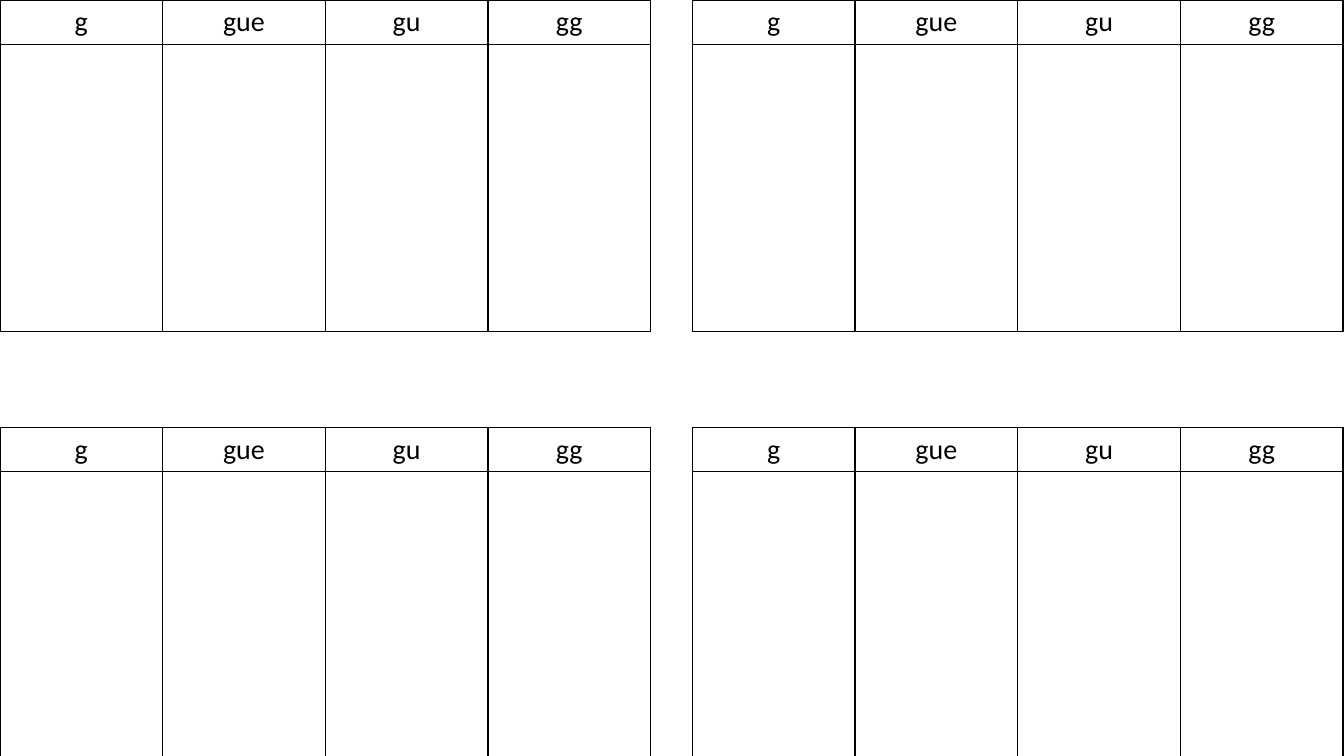
from lxml import etree
from pptx import Presentation
from pptx.dml.color import RGBColor
from pptx.enum.text import PP_ALIGN
from pptx.oxml.ns import qn
from pptx.util import Cm, Pt

CENTER = PP_ALIGN.CENTER
HEADS = ["g", "gue", "gu", "gg"]
LEFTS = [0, 17.45]
TOPS = [0, 10.77]
ROWS = [1.1, 7.23]
COL = 4.1
INK = "000000"
FONT = "Calibri"


def paint(fore, color):
    fore.rgb = RGBColor.from_string(color)


def border(cell):
    props = cell._tc.get_or_add_tcPr()
    for side in ("a:lnL", "a:lnR", "a:lnT", "a:lnB"):
        line = etree.SubElement(props, qn(side), w=str(Pt(1)))
        fill = etree.SubElement(line, qn("a:solidFill"))
        etree.SubElement(fill, qn("a:srgbClr"), val=INK)


def write(cell, text):
    para = cell.text_frame.paragraphs[0]
    para.alignment = CENTER
    run = para.add_run()
    run.text = text
    run.font.name = FONT
    run.font.size = Pt(20)
    run.font.bold = False
    paint(run.font.color, INK)


def grid(slide, left, top):
    size = Cm(COL * len(HEADS)), Cm(sum(ROWS))
    frame = slide.shapes.add_table(len(ROWS), len(HEADS), Cm(left), Cm(top), *size)
    table = frame.table
    table.first_row = False
    table.horz_banding = False
    for col in table.columns:
        col.width = Cm(COL)
    for row, height in zip(table.rows, ROWS):
        row.height = Cm(height)
    for cell in table.iter_cells():
        border(cell)
        cell.fill.background()
    for i, head in enumerate(HEADS):
        write(table.cell(0, i), head)


def main():
    deck = Presentation()
    deck.slide_width = Cm(33.87)
    deck.slide_height = Cm(19.05)
    slide = deck.slides.add_slide(deck.slide_layouts[6])
    for left in LEFTS:
        for top in TOPS:
            grid(slide, left, top)
    deck.save("out.pptx")


if __name__ == "__main__":
    main()
